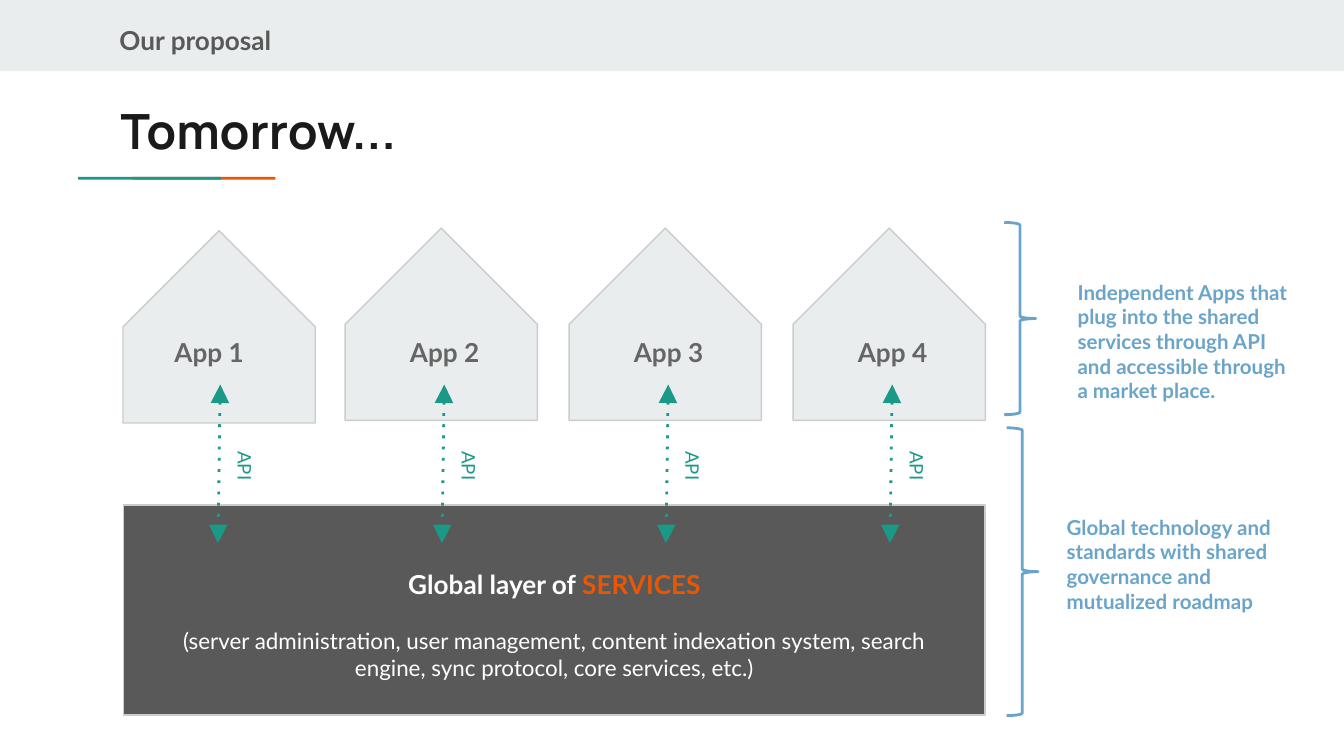
from dataclasses import dataclass

from lxml import etree
from pptx import Presentation
from pptx.dml.color import RGBColor
from pptx.enum import shapes, text
from pptx.oxml import ns
from pptx.util import Pt

Shape = shapes.MSO_SHAPE
Align = text.PP_ALIGN


@dataclass(frozen=True)
class Theme:
    body: str = "Lato"
    head: str = "Manrope"
    pale: str = "E9EDEE"
    edge: str = "CCCCCC"
    dark: str = "595959"
    grey: str = "666666"
    ink: str = "1A1A1A"
    white: str = "FFFFFF"
    green: str = "1A9988"
    orange: str = "EB5600"
    blue: str = "6AA4C8"
    title: float = 26
    label: float = 14
    detail: float = 12
    note: float = 11
    small: float = 10
    thin: float = 0.75
    thick: float = 1.5


@dataclass(frozen=True)
class Box:
    x: float
    y: float
    w: float
    h: float
    turn: float = 0


@dataclass(frozen=True)
class Run:
    words: str
    size: float
    color: str
    bold: bool = True
    font: str = "Lato"


@dataclass(frozen=True)
class App:
    name: str
    house: Box
    label: Box
    axis: float


@dataclass(frozen=True)
class Note:
    brace: Box
    area: Box
    words: str


T = Theme()


def rgb(code: str) -> RGBColor:
    return RGBColor.from_string(code)


def draw(slide, kind, box: Box, fill: str = "", line: str = "", width: float = T.thin):
    """Add a preset shape; an empty colour means no fill or no line."""
    item = slide.shapes.add_shape(kind, Pt(box.x), Pt(box.y), Pt(box.w), Pt(box.h))
    item.rotation = box.turn
    item.shadow.inherit = False
    if fill:
        item.fill.solid()
        item.fill.fore_color.rgb = rgb(fill)
    else:
        item.fill.background()
    if line:
        item.line.color.rgb = rgb(line)
        item.line.width = Pt(width)
    else:
        item.line.fill.background()
    return item


def write(slide, box: Box, *paras: list[Run], align=Align.LEFT, gap: float = 0) -> None:
    """Add a text box with one list of runs per paragraph."""
    item = slide.shapes.add_textbox(Pt(box.x), Pt(box.y), Pt(box.w), Pt(box.h))
    item.rotation = box.turn
    frame = item.text_frame
    frame.word_wrap = True
    frame.margin_left = frame.margin_right = Pt(7.2)
    frame.margin_top = frame.margin_bottom = Pt(7.2)
    for i, runs in enumerate(paras):
        para = frame.add_paragraph() if i else frame.paragraphs[0]
        para.alignment = align
        para.space_before = Pt(gap if i else 0)
        for run in runs:
            part = para.add_run()
            part.text = run.words
            part.font.name = run.font
            part.font.size = Pt(run.size)
            part.font.bold = run.bold
            part.font.color.rgb = rgb(run.color)


def link(slide, x1: float, y1: float, x2: float, y2: float) -> None:
    """Add a dotted line with an arrowhead at both ends."""
    item = slide.shapes.add_connector(
        shapes.MSO_CONNECTOR.STRAIGHT, Pt(x1), Pt(y1), Pt(x2), Pt(y2))
    item.line.color.rgb = rgb(T.green)
    item.line.width = Pt(T.thick)
    ln = item.line._get_or_add_ln()
    etree.SubElement(ln, ns.qn("a:prstDash"), val="dot")
    for end in ("a:headEnd", "a:tailEnd"):
        etree.SubElement(ln, ns.qn(end), type="triangle", w="lg", len="lg")
    etree.SubElement(item._element.spPr, ns.qn("a:effectLst"))


def plug(slide, app: App) -> None:
    """Add an app, its name and its link to the services."""
    draw(slide, Shape.PENTAGON, app.house, T.pale, T.edge)
    write(slide, app.label, [Run(app.name, T.label, T.grey)])
    link(slide, app.axis + 0.6, 206, app.axis - 0.6, 291)
    write(slide, Box(app.axis - 0.8, 244.8, 36.7, 16.6, 90),
          [Run("API", T.small, T.green, False)])


def remark(slide, note: Note) -> None:
    """Add a brace and the text beside it."""
    draw(slide, Shape.RIGHT_BRACE, note.brace, line=T.blue, width=T.thick)
    write(slide, note.area, [Run(note.words, T.note, T.blue)])


# The first app sits slightly apart from the even row of the others
STEP, SIDE = 120, 103
APPS = [App("App 1", Box(65.9, 123.6, SIDE, SIDE, 270), Box(86.4, 172.8, 88, 50), 117.4)]
APPS += [
    App(f"App {i + 1}",
        Box(64.9 + STEP * i, 122.2, SIDE, SIDE, 270),
        Box(92.5 + STEP * i, 172.8, 88, 50),
        117.4 + STEP * i)
    for i in range(1, 4)
]

NOTES = [
    Note(Box(539.3, 229.2, 16.8, 154.2), Box(564.3, 268.6, 133.2, 103),
         "Global technology and standards with shared governance and mutualized roadmap"),
    Note(Box(538, 119.2, 16.8, 103), Box(570.2, 142.6, 133.2, 59),
         "Independent Apps that plug into the shared services through API "
         "and accessible through a market place."),
]


def main() -> None:
    deck = Presentation()
    deck.slide_width, deck.slide_height = Pt(720), Pt(405)
    slide = deck.slides.add_slide(deck.slide_layouts[6])

    # Header band and title
    draw(slide, Shape.RECTANGLE, Box(0, 0, 720, 38.2), T.pale)
    write(slide, Box(56.9, 5.8, 140.4, 28.8), [Run("Our proposal", T.label, T.dark)])
    write(slide, Box(57.6, 46.8, 208, 42.5),
          [Run("Tomorrow...", T.title, T.ink, font=T.head)])

    # Two-coloured rule under the title
    for x, color in ((71, T.orange), (41.8, T.green)):
        draw(slide, Shape.RECTANGLE, Box(x, 94.7, 76.5, 1.5), color)

    # Services layer
    draw(slide, Shape.RECTANGLE, Box(66.2, 270.6, 461.5, 112.6), T.dark, T.edge)
    write(slide, Box(90, 297.4, 414, 67),
          [Run("Global layer of ", T.label, T.white), Run("SERVICES", T.label, T.orange)],
          [Run("(server administration, user management, content indexation system, "
               "search engine, sync protocol, core services, etc.)",
               T.detail, T.white, False)],
          align=Align.CENTER, gap=14.4)

    # Apps and side notes
    for app in APPS:
        plug(slide, app)
    for note in NOTES:
        remark(slide, note)

    deck.save("out.pptx")


if __name__ == "__main__":
    main()
